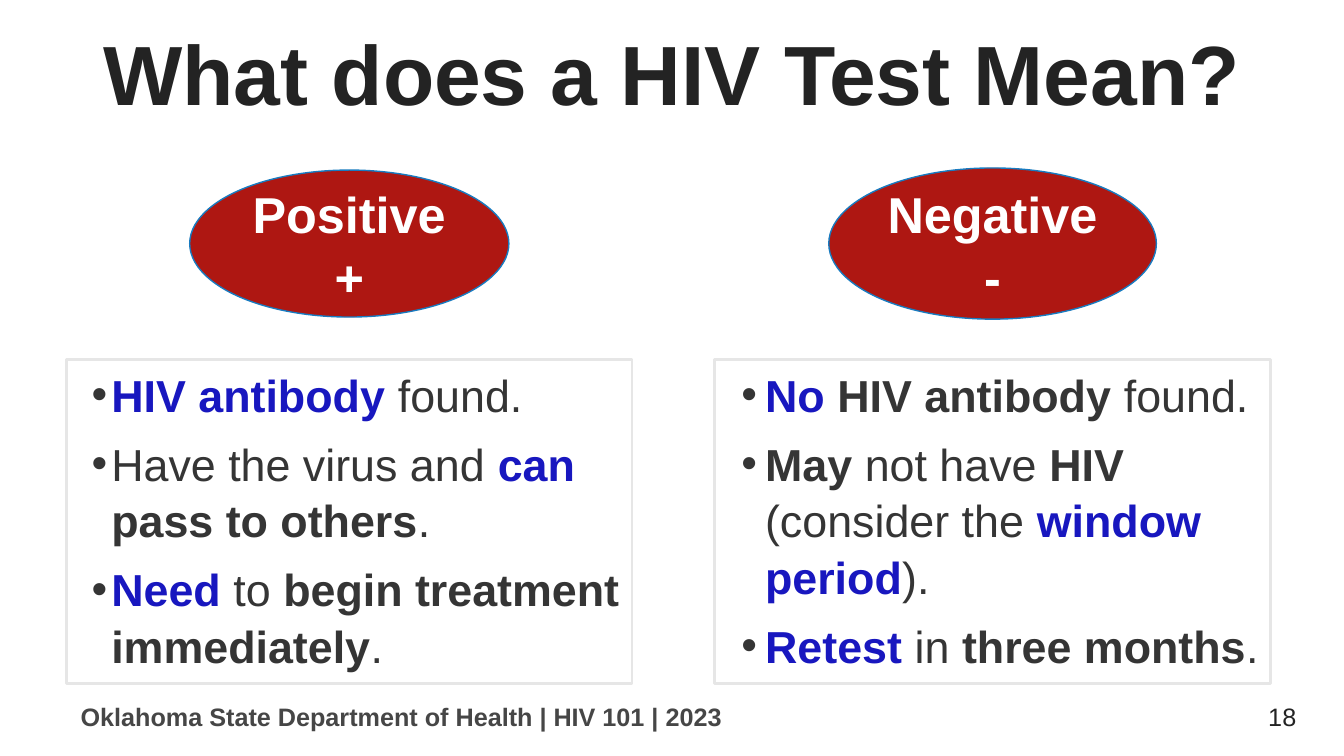
from lxml import etree
from pptx import Presentation
from pptx.dml.color import RGBColor
from pptx.enum.shapes import MSO_SHAPE as SHAPE
from pptx.enum.text import MSO_ANCHOR as ANCHOR, MSO_AUTO_SIZE as AUTO, PP_ALIGN as ALIGN
from pptx.oxml.ns import qn
from pptx.util import Pt

BLACK = RGBColor(0x23, 0x23, 0x23)
DARK = RGBColor(0x35, 0x35, 0x35)
GREY = RGBColor(0x46, 0x46, 0x46)
PALE = RGBColor(0xE6, 0xE6, 0xE6)
INDIGO = RGBColor(0x18, 0x17, 0xBF)
BLUE = RGBColor(0x18, 0x7B, 0xC0)
RED = RGBColor(0xAE, 0x17, 0x12)
WHITE = RGBColor(0xFF, 0xFF, 0xFF)

KEY, BOLD, PLAIN = (INDIGO, True), (DARK, True), (DARK, False)

POSITIVE = [
    [("HIV antibody ", KEY), ("found.", PLAIN)],
    [("Have the virus and ", PLAIN), ("can ", KEY), ("pass to others", BOLD), (".", PLAIN)],
    [("Need", KEY), (" to ", PLAIN), ("begin treatment immediately", BOLD), (".", PLAIN)],
]
NEGATIVE = [
    [("No ", KEY), ("HIV antibody", BOLD), (" found.", PLAIN)],
    [("May ", BOLD), ("not have ", PLAIN), ("HIV", BOLD), (" (consider the ", PLAIN),
     ("window period", KEY), (").", PLAIN)],
    [("Retest", KEY), (" in ", PLAIN), ("three months", BOLD), (".", PLAIN)],
]


def place(sp, left, top, width, height):
    sp.left, sp.top, sp.width, sp.height = Pt(left), Pt(top), Pt(width), Pt(height)


def add_run(p, text, size, color, bold=False):
    r = p.add_run()
    r.text = text
    r.font.name = "Arial"
    r.font.size = Pt(size)
    r.font.bold = bold
    r.font.color.rgb = color


def add_bullet(p, indent, hang):
    pPr = p._p.get_or_add_pPr()
    pPr.set("marL", str(Pt(indent)))
    pPr.set("indent", str(-Pt(hang)))
    clr = etree.SubElement(pPr, qn("a:buClr"))
    etree.SubElement(clr, qn("a:srgbClr"), val=str(DARK))
    etree.SubElement(pPr, qn("a:buFont"), typeface="Arial")
    etree.SubElement(pPr, qn("a:buChar"), char="•")


def add_title(s, text, left, top, width, height):
    sp = s.shapes.title
    place(sp, left, top, width, height)
    tf = sp.text_frame
    tf.auto_size = AUTO.NONE
    tf.vertical_anchor = ANCHOR.MIDDLE
    p = tf.paragraphs[0]
    p.alignment = ALIGN.CENTER
    add_run(p, text, 60, BLACK, True)


def add_points(sp, points, indent, hang, left, top, width, height):
    place(sp, left, top, width, height)
    sp.line.color.rgb = PALE
    sp.line.width = Pt(2)
    tf = sp.text_frame
    tf.auto_size = AUTO.NONE
    tf.word_wrap = True
    tf.vertical_anchor = ANCHOR.TOP
    tf.margin_left = 0
    for i, point in enumerate(points):
        p = tf.add_paragraph() if i else tf.paragraphs[0]
        add_bullet(p, indent, hang)
        p.line_spacing = 1.05
        p.space_before = Pt(9 if i else 0)
        for text, (color, bold) in point:
            add_run(p, text, 32, color, bold)


def add_result(s, lines, left, top, width, height):
    sp = s.shapes.add_shape(SHAPE.OVAL, Pt(left), Pt(top), Pt(width), Pt(height))
    sp.shadow.inherit = False
    sp.fill.solid()
    sp.fill.fore_color.rgb = RED
    sp.line.color.rgb = BLUE
    sp.line.width = Pt(1)
    tf = sp.text_frame
    tf.word_wrap = True
    tf.vertical_anchor = ANCHOR.MIDDLE
    for i, line in enumerate(lines):
        p = tf.add_paragraph() if i else tf.paragraphs[0]
        p.alignment = ALIGN.CENTER
        p.line_spacing = 1.05
        add_run(p, line, 36, WHITE, True)


def add_column(s, sp, lines, points, indent, hang, oval, left, top, width, height):
    add_points(sp, points, indent, hang, left, top, width, height)
    oval_w, oval_h = oval
    add_result(s, lines, left + (width - oval_w) / 2, top - 83 - oval_h / 2, oval_w, oval_h)


def add_label(s, text, size, color, bold, align, left, top, width, height):
    sp = s.shapes.add_textbox(Pt(left), Pt(top), Pt(width), Pt(height))
    tf = sp.text_frame
    tf.word_wrap = True
    tf.vertical_anchor = ANCHOR.MIDDLE
    p = tf.paragraphs[0]
    p.alignment = align
    add_run(p, text, size, color, bold)


def add_footer(s, left, top, width, height):
    add_label(s, "18", 18, BLACK, False, ALIGN.RIGHT, left + width - 216, top, 216, height)
    add_label(s, "Oklahoma State Department of Health | HIV 101 | 2023", 18, GREY, True,
              ALIGN.LEFT, left, top, 511, height)


def main():
    prs = Presentation()
    prs.slide_width, prs.slide_height = Pt(960), Pt(540)
    s = prs.slides.add_slide(prs.slide_layouts[3])
    positive, negative = s.placeholders[1], s.placeholders[2]
    add_title(s, "What does a HIV Test Mean?", 0, 6, 960, 90)
    add_column(s, positive, ["Positive", "+"], POSITIVE, 32, 14, (228, 105), 47.5, 257, 404, 231)
    add_column(s, negative, ["Negative", "-"], NEGATIVE, 36, 17, (234, 108), 510.5, 257, 397, 231)
    add_footer(s, 50.5, 497, 882.5, 29)
    prs.save("out.pptx")


if __name__ == "__main__":
    main()
